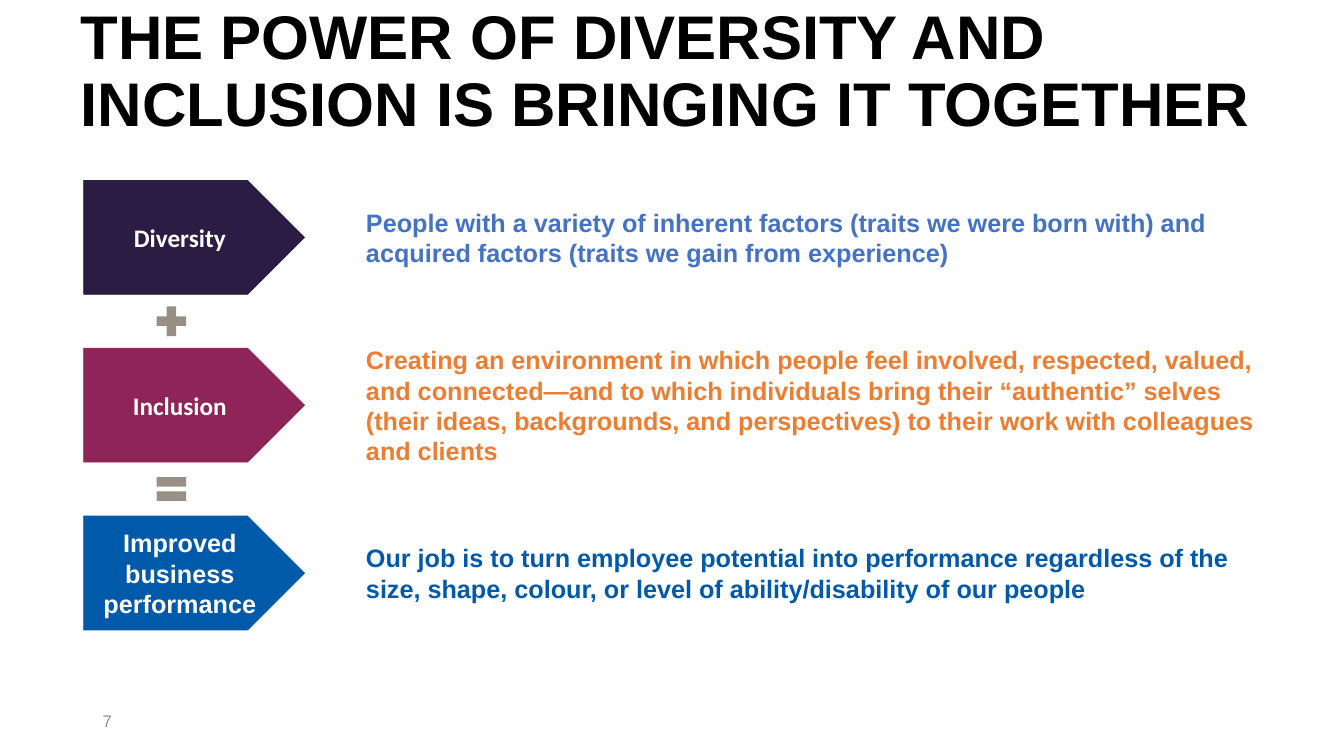
"""Build the slide on diversity, inclusion and business performance."""
from dataclasses import dataclass

from pptx import Presentation
from pptx.dml.color import RGBColor
from pptx.enum import shapes, text
from pptx.util import Inches, Pt

TITLE = "THE POWER OF DIVERSITY AND INCLUSION IS BRINGING IT TOGETHER"
ROWS = [
    ("Diversity", "Calibri", "2A1C42", "4472C4",
     "People with a variety of inherent factors (traits we were born with) "
     "and acquired factors (traits we gain from experience)"),
    ("Inclusion", "Calibri", "8E2457", "ED7D31",
     "Creating an environment in which people feel involved, respected, "
     "valued, and connected—and to which individuals bring their “authentic” "
     "selves (their ideas, backgrounds, and perspectives) to their work with "
     "colleagues and clients"),
    ("Improved business performance", "Arial", "005AA9", "005AA9",
     "Our job is to turn employee potential into performance regardless of "
     "the size, shape, colour, or level of ability/disability of our people"),
]
SIGNS = [shapes.MSO_SHAPE.MATH_PLUS, shapes.MSO_SHAPE.MATH_EQUAL]
PAGE = "7"


@dataclass(frozen=True)
class Theme:
    """Colours, fonts and type sizes."""
    font: str = "Arial"
    ink: str = "000000"
    pale: str = "FFFFFF"
    grey: str = "999085"
    head: int = 44
    body: int = 18
    foot: int = 12


LOOK = Theme()
TOP, STEP, HIGH = 1.79, 1.665, 1.13
LEFT, WIDE = 0.83, 2.19
SIGN = 0.4


def box(*sides):
    """Convert sides in inches to lengths."""
    return [Inches(side) for side in sides]


def write(shape, words, size, tint, bold=True, font=LOOK.font):
    """Put one styled paragraph into a shape and return it."""
    frame = shape.text_frame
    frame.text = words
    frame.word_wrap = True
    frame.auto_size = text.MSO_AUTO_SIZE.NONE
    frame.vertical_anchor = text.MSO_ANCHOR.MIDDLE
    para = frame.paragraphs[0]
    para.alignment = text.PP_ALIGN.LEFT
    para.font.name, para.font.size, para.font.bold = font, Pt(size), bold
    para.font.color.rgb = RGBColor.from_string(tint)
    return para


def draw(slide, kind, sides, tint):
    """Add a flat preset shape without an outline."""
    shape = slide.shapes.add_shape(kind, *box(*sides))
    shape.shadow.inherit = False
    shape.fill.solid()
    shape.fill.fore_color.rgb = RGBColor.from_string(tint)
    shape.line.fill.background()
    return shape


def add_row(slide, top, label, font, fill, tint, words):
    """Add a labelled arrow and its explanation."""
    note = slide.shapes.add_textbox(*box(2.83, top, 9.82, HIGH))
    para = write(note, words, LOOK.body, tint)
    para.space_after = Pt(2.2)
    props = para._p.get_or_add_pPr()
    props.set("marL", str(Inches(0.8)))
    props.set("indent", "0")
    frame = note.text_frame
    frame.margin_left = frame.margin_right = 0
    frame.margin_top = frame.margin_bottom = 0

    arrow = draw(slide, shapes.MSO_SHAPE.PENTAGON, (LEFT, top, WIDE, HIGH), fill)
    arrow.line.color.rgb = RGBColor.from_string(fill)
    arrow.line.width = Pt(0.5)
    para = write(arrow, label, LOOK.body, LOOK.pale, font=font)
    para.alignment = text.PP_ALIGN.CENTER


def main():
    """Compose and save the slide."""
    deck = Presentation()
    deck.slide_width, deck.slide_height = box(13.33, 7.5)
    slide = deck.slides.add_slide(deck.slide_layouts[5])

    title = slide.shapes.title
    title.left, title.top, title.width, title.height = box(0.7, 0, 11.97, 1.45)
    write(title, TITLE, LOOK.head, LOOK.ink).line_spacing = 0.9

    for i, row in enumerate(ROWS):
        add_row(slide, TOP + i * STEP, *row)

    for i, kind in enumerate(SIGNS):
        top = TOP + i * STEP + (HIGH + STEP - SIGN) / 2
        draw(slide, kind, (1.5, top, SIGN, SIGN), LOOK.grey)

    page = slide.shapes.add_textbox(*box(0.92, 6.95, 3, 0.4))
    write(page, PAGE, LOOK.foot, LOOK.grey, bold=False)
    deck.save("out.pptx")


if __name__ == "__main__":
    main()
